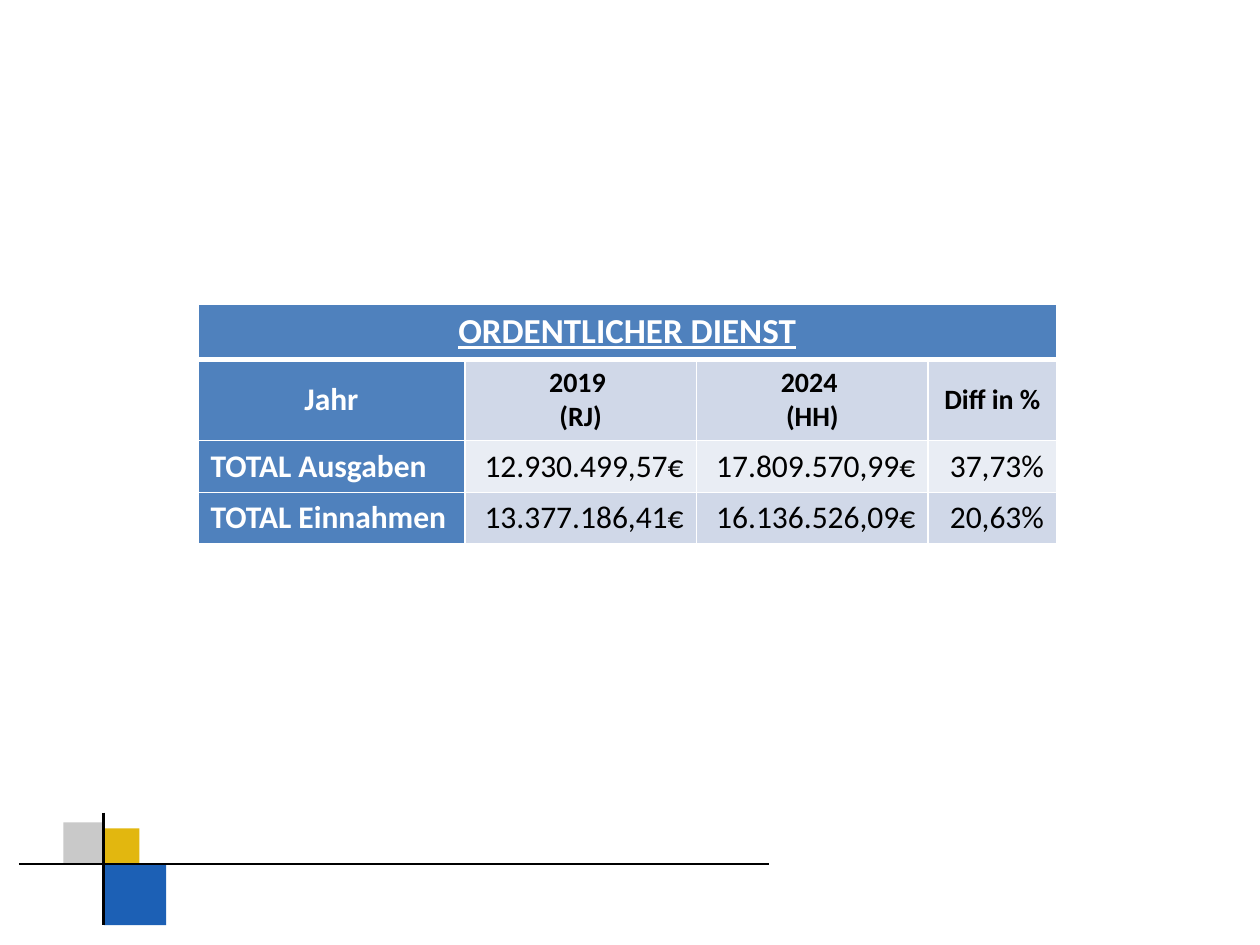
from lxml import etree
from pptx import Presentation
from pptx.dml.color import RGBColor
from pptx.enum.shapes import MSO_CONNECTOR, MSO_SHAPE
from pptx.enum.text import MSO_ANCHOR, PP_ALIGN
from pptx.oxml import parse_xml
from pptx.oxml.ns import nsdecls, qn
from pptx.util import Cm, Pt

RECTANGLE = MSO_SHAPE.RECTANGLE
STRAIGHT = MSO_CONNECTOR.STRAIGHT
LEFT, CENTER, RIGHT = PP_ALIGN.LEFT, PP_ALIGN.CENTER, PP_ALIGN.RIGHT
TOP, MIDDLE = MSO_ANCHOR.TOP, MSO_ANCHOR.MIDDLE

BLACK = RGBColor(0x00, 0x00, 0x00)
WHITE = RGBColor(0xFF, 0xFF, 0xFF)
HEADER_BLUE = RGBColor(0x4F, 0x81, 0xBD)
BAND_DARK = RGBColor(0xD0, 0xD8, 0xE8)
BAND_LIGHT = RGBColor(0xE9, 0xED, 0xF4)
SQUARE_BLUE = RGBColor(0x1C, 0x60, 0xB5)
SQUARE_YELLOW = RGBColor(0xE2, 0xB7, 0x0F)
SQUARE_GREY = RGBColor(0xC9, 0xC9, 0xC9)

TITLE = {"size": Pt(20), "bold": True, "underline": True}
LABEL = {"size": Pt(18), "bold": True}
YEAR = {"size": Pt(16), "bold": True}
AMOUNT = {"size": Pt(18), "bold": False}

ROWS = [
    ["ORDENTLICHER DIENST"],
    ["Jahr", "2019 \n(RJ)", "2024 \n(HH)", "Diff in %"],
    ["TOTAL Ausgaben", "12.930.499,57€", "17.809.570,99€", "37,73%"],
    ["TOTAL Einnahmen", "13.377.186,41€", "16.136.526,09€", "20,63%"],
]
COLUMN_WIDTHS = [5.38, 4.67, 4.67, 2.59]
ROW_HEIGHTS = [1.04, 1.63, 1.04, 1.04]
BANDS = [HEADER_BLUE, BAND_DARK, BAND_LIGHT, BAND_DARK]


class SlideBuilder:
    font_name = "Calibri"

    def __init__(self, slide):
        self.slide = slide

    def square(self, left, top, size, color):
        shape = self.slide.shapes.add_shape(
            RECTANGLE, Cm(left), Cm(top), Cm(size), Cm(size))
        shape.shadow.inherit = False
        shape.fill.solid()
        shape.fill.fore_color.rgb = color
        shape.line.fill.background()

    def line(self, *ends):
        connector = self.slide.shapes.add_connector(STRAIGHT, *map(Cm, ends))
        connector.line.color.rgb = BLACK
        connector.line.width = Pt(1.5)
        etree.SubElement(connector._element.spPr, qn("a:effectLst"))

    def table(self, left, top, widths, heights):
        table = self.slide.shapes.add_table(
            len(heights), len(widths), Cm(left), Cm(top),
            Cm(sum(widths)), Cm(sum(heights))).table
        for column, width in zip(table.columns, widths):
            column.width = Cm(width)
        for row, height in zip(table.rows, heights):
            row.height = Cm(height)
        return table

    def cell(self, cell, text, fill, color, values, alignment, anchor):
        cell.text = text
        cell.vertical_anchor = anchor
        for paragraph in cell.text_frame.paragraphs:
            paragraph.alignment = alignment
            paragraph.font.name = self.font_name
            paragraph.font.color.rgb = color
            for name, value in values.items():
                setattr(paragraph.font, name, value)
        cell.fill.solid()
        cell.fill.fore_color.rgb = fill

    def borders(self, cell, **widths):
        properties = cell._tc.get_or_add_tcPr()
        for index, (side, width) in enumerate(widths.items()):
            properties.insert(index, parse_xml(
                f'<a:ln{side} {nsdecls("a")} w="{Pt(width)}"><a:solidFill>'
                f'<a:srgbClr val="{WHITE}"/></a:solidFill></a:ln{side}>'))


def cell_format(row, column):
    if row == 0:
        return TITLE, CENTER, TOP
    if row == 1:
        return (YEAR if column else LABEL), CENTER, MIDDLE
    return (AMOUNT, RIGHT, TOP) if column else (LABEL, LEFT, TOP)


def main():
    presentation = Presentation()
    presentation.slide_width = Cm(25.4)
    presentation.slide_height = Cm(19.05)
    builder = SlideBuilder(
        presentation.slides.add_slide(presentation.slide_layouts[6]))

    builder.square(2.1, 17.4, 1.25, SQUARE_BLUE)
    builder.square(2.09, 16.7, 0.72, SQUARE_YELLOW)
    builder.square(1.28, 16.58, 0.83, SQUARE_GREY)
    builder.line(0.38, 17.42, 15.5, 17.42)
    builder.line(2.09, 16.38, 2.09, 18.64)

    table = builder.table(3.99, 6.13, COLUMN_WIDTHS, ROW_HEIGHTS)
    table.cell(0, 0).merge(table.cell(0, len(COLUMN_WIDTHS) - 1))
    for row, texts in enumerate(ROWS):
        for column, text in enumerate(texts):
            fill = BANDS[row] if column else HEADER_BLUE
            color = BLACK if column else WHITE
            builder.cell(table.cell(row, column), text, fill, color,
                         *cell_format(row, column))
        for column in range(len(COLUMN_WIDTHS)):
            builder.borders(table.cell(row, column), L=1, R=1,
                            T=3 if row == 1 else 1, B=3 if row == 0 else 1)

    presentation.save("out.pptx")


if __name__ == "__main__":
    main()
